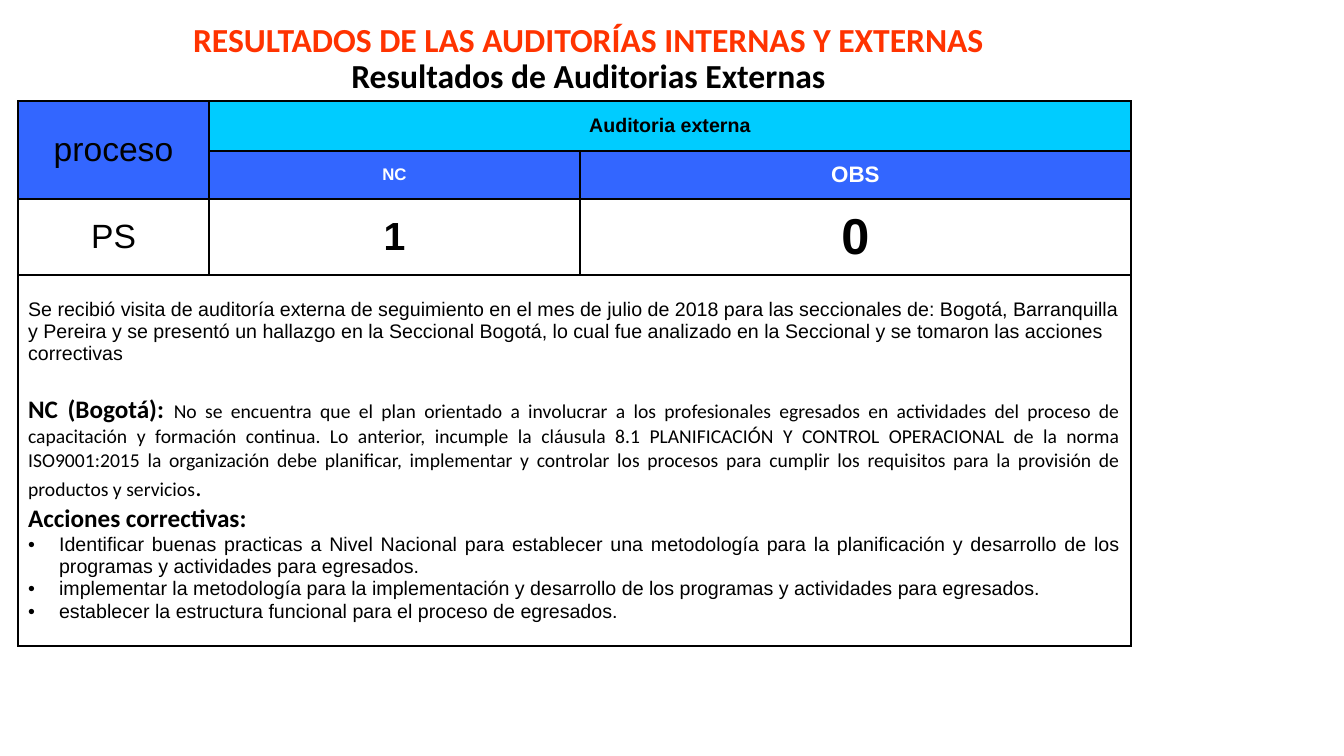
from lxml.etree import SubElement
from pptx import Presentation
from pptx.dml.color import RGBColor
from pptx.enum.text import MSO_ANCHOR, MSO_AUTO_SIZE, PP_ALIGN
from pptx.oxml.ns import qn
from pptx.util import Emu, Pt

EMU_PER_PX = 914400 / 100.8
ORANGE = RGBColor(0xFF, 0x33, 0x00)
BLUE = RGBColor(0x33, 0x66, 0xFF)
CYAN = RGBColor(0x00, 0xCC, 0xFF)
WHITE = RGBColor(0xFF, 0xFF, 0xFF)
BLACK = RGBColor(0x00, 0x00, 0x00)

COLUMN_WIDTHS = [191, 371, 551]
ROW_HEIGHTS = [50, 48, 76, 371]
BULLET_INDENT = 31

HEADER_CELLS = [
    (0, 0, "proceso", BLUE, {"size": Pt(24)}),
    (0, 1, "Auditoria externa", CYAN, {"size": Pt(14), "bold": True}),
    (1, 1, "NC", BLUE, {"size": Pt(12), "bold": True, "color": WHITE}),
    (1, 2, "OBS", BLUE, {"size": Pt(16), "bold": True, "color": WHITE}),
    (2, 0, "PS", None, {"size": Pt(24)}),
    (2, 1, "1", None, {"size": Pt(28), "bold": True}),
    (2, 2, "0", None, {"size": Pt(36), "bold": True}),
]

ARIAL = {"size": Pt(14)}
CALIBRI = {"size": Pt(14), "name": "Calibri"}
CALIBRI_LARGE = {"size": Pt(18), "name": "Calibri"}
CALIBRI_HEADING = {**CALIBRI_LARGE, "bold": True}

VISIT = (
    "Se recibió visita de auditoría externa de seguimiento en el mes de julio de 2018 "
    "para las seccionales de: Bogotá, Barranquilla y Pereira y se presentó un hallazgo "
    "en la Seccional Bogotá, lo cual fue analizado en la Seccional y se tomaron "
    "las acciones correctivas"
)
FINDING = (
    "No se encuentra que el plan orientado a involucrar a los profesionales egresados "
    "en actividades del proceso de capacitación y formación continua. Lo anterior, "
    "incumple la cláusula 8.1 PLANIFICACIÓN Y CONTROL OPERACIONAL de la norma "
    "ISO9001:2015 la organización debe planificar, implementar y controlar los procesos "
    "para cumplir los requisitos para la provisión de productos y servicios"
)
ACTIONS = [
    "Identificar buenas practicas a Nivel Nacional para establecer una metodología para "
    "la planificación y desarrollo de los programas y actividades para egresados.",
    "implementar la metodología para la implementación y desarrollo de los programas y "
    "actividades para egresados.",
    "establecer la estructura funcional para el proceso de egresados.",
]


def px(length):
    return Emu(round(length * EMU_PER_PX))


def apply_format(target, values):
    for name, value in values.items():
        setattr(target, name, value)


def add_run(paragraph, text, values):
    run = paragraph.add_run()
    run.text = text
    font_values = {"name": "Arial", "bold": False, **values}
    run.font.color.rgb = font_values.pop("color", BLACK)
    apply_format(run.font, font_values)


def add_bullet(paragraph):
    properties = paragraph._p.get_or_add_pPr()
    properties.set("marL", str(px(BULLET_INDENT)))
    properties.set("indent", str(-px(BULLET_INDENT)))
    SubElement(properties, qn("a:buFont"), typeface="Arial")
    SubElement(properties, qn("a:buChar"), char="•")


def add_borders(cell):
    properties = cell._tc.get_or_add_tcPr()
    for side in ("a:lnL", "a:lnR", "a:lnT", "a:lnB"):
        line = SubElement(properties, qn(side), w=str(Pt(1)))
        fill = SubElement(line, qn("a:solidFill"))
        SubElement(fill, qn("a:srgbClr"), val=str(BLACK))


def add_title(slide):
    title = slide.shapes.title
    apply_format(title, {"left": px(59), "top": px(-25), "width": px(1059), "height": px(126)})
    frame = title.text_frame
    apply_format(frame, {
        "word_wrap": True,
        "auto_size": MSO_AUTO_SIZE.NONE,
        "vertical_anchor": MSO_ANCHOR.BOTTOM,
    })
    paragraph = frame.paragraphs[0]
    apply_format(paragraph, {"alignment": PP_ALIGN.CENTER, "line_spacing": 0.9})
    values = {"size": Pt(24), "name": "Calibri", "bold": True}
    add_run(paragraph, "RESULTADOS DE LAS AUDITORÍAS INTERNAS Y EXTERNAS", {**values, "color": ORANGE})
    paragraph.add_line_break()
    add_run(paragraph, "Resultados de Auditorias Externas", values)


def add_audit_table(slide):
    shape = slide.shapes.add_table(
        len(ROW_HEIGHTS), len(COLUMN_WIDTHS), px(18), px(101),
        px(sum(COLUMN_WIDTHS)), px(sum(ROW_HEIGHTS)),
    )
    table = shape.table
    apply_format(table, {"first_row": False, "horz_banding": False})
    for column, width in zip(table.columns, COLUMN_WIDTHS):
        column.width = px(width)
    for row, height in zip(table.rows, ROW_HEIGHTS):
        row.height = px(height)
    for cell in table.iter_cells():
        add_borders(cell)
        cell.fill.background()
        cell.vertical_anchor = MSO_ANCHOR.MIDDLE
    table.cell(0, 0).merge(table.cell(1, 0))
    table.cell(0, 1).merge(table.cell(0, 2))
    table.cell(3, 0).merge(table.cell(3, 2))
    return table


def fill_header_cell(cell, text, color, values):
    if color is not None:
        cell.fill.solid()
        cell.fill.fore_color.rgb = color
    paragraph = cell.text_frame.paragraphs[0]
    paragraph.alignment = PP_ALIGN.CENTER
    add_run(paragraph, text, values)


def fill_findings(cell):
    frame = cell.text_frame
    visit = frame.paragraphs[0]
    visit.alignment = PP_ALIGN.LEFT
    add_run(visit, VISIT, ARIAL)

    finding = frame.add_paragraph()
    apply_format(finding, {"alignment": PP_ALIGN.JUSTIFY, "space_before": Pt(21)})
    add_run(finding, "NC (Bogotá): ", CALIBRI_HEADING)
    add_run(finding, FINDING, CALIBRI)
    add_run(finding, ".", CALIBRI_LARGE)

    heading = frame.add_paragraph()
    heading.alignment = PP_ALIGN.JUSTIFY
    add_run(heading, "Acciones correctivas:", CALIBRI_HEADING)

    for text in ACTIONS:
        action = frame.add_paragraph()
        action.alignment = PP_ALIGN.JUSTIFY
        add_bullet(action)
        add_run(action, text, ARIAL)


def main():
    presentation = Presentation()
    apply_format(presentation, {"slide_width": px(1344), "slide_height": px(756)})
    slide = presentation.slides.add_slide(presentation.slide_layouts[5])
    add_title(slide)
    table = add_audit_table(slide)
    for row, column, text, color, values in HEADER_CELLS:
        fill_header_cell(table.cell(row, column), text, color, values)
    fill_findings(table.cell(3, 0))
    presentation.save("out.pptx")


if __name__ == "__main__":
    main()
